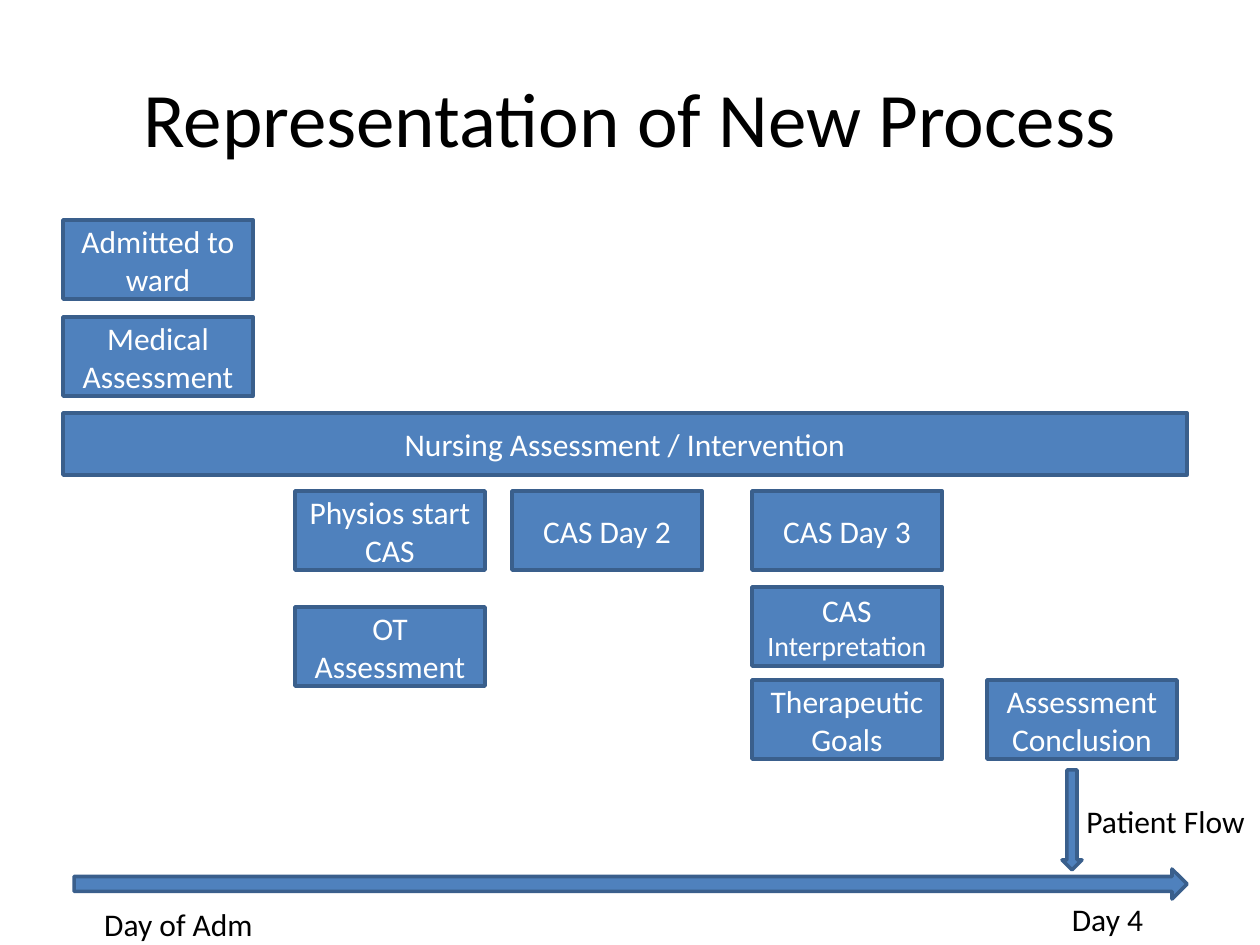
from dataclasses import dataclass

from pptx import Presentation
from pptx.dml.color import RGBColor
from pptx.enum.shapes import MSO_SHAPE
from pptx.enum.text import MSO_ANCHOR, PP_ALIGN
from pptx.util import Emu, Pt

PX_PER_INCH = 126
FONT = "Calibri"
BLUE, DARK_BLUE, WHITE, BLACK = "4F81BD", "3A5F8C", "FFFFFF", "000000"

STEP_WIDTH, STEP_HEIGHT = 190, 79
LABEL_WIDTH, LABEL_HEIGHT = 357, 43
# Left edges of the columns, one for each stage of the stay
ADMISSION, DAY_1, DAY_2, DAY_3, DAY_4 = 63, 295, 512, 752, 987
# Top edges of the rows
ROW_ADMITTED, ROW_MEDICAL, ROW_CAS = 220, 317, 491
ROW_INTERPRETATION, ROW_OT, ROW_GOALS = 587, 607, 680


@dataclass(frozen=True)
class Block:
    left: int
    top: int
    text: str = ""
    width: int = STEP_WIDTH
    height: int = STEP_HEIGHT
    kind: MSO_SHAPE = MSO_SHAPE.FLOWCHART_PROCESS
    small_text: str = ""


@dataclass(frozen=True)
class Label:
    left: int
    top: int
    text: str


STEPS = [
    Block(ADMISSION, ROW_ADMITTED, "Admitted to ward"),
    Block(ADMISSION, ROW_MEDICAL, "Medical Assessment"),
    Block(DAY_1, ROW_OT, "OT Assessment"),
    Block(DAY_1, ROW_CAS, "Physios start CAS"),
    Block(DAY_2, ROW_CAS, "CAS Day 2"),
    Block(DAY_3, ROW_GOALS, "Therapeutic Goals"),
    Block(DAY_3, ROW_CAS, "CAS Day 3"),
    Block(DAY_3, ROW_INTERPRETATION, "CAS ", small_text="Interpretation"),
    Block(DAY_4, ROW_GOALS, "Assessment Conclusion"),
    Block(ADMISSION, 413, "Nursing Assessment / Intervention", 1124, 62),
]
ARROWS = [
    Block(74, 869, width=1113, height=30, kind=MSO_SHAPE.RIGHT_ARROW),
    Block(1062, 770, width=20, height=100, kind=MSO_SHAPE.DOWN_ARROW),
]
LABELS = [
    Label(0, 902, "Day of Adm"),
    Label(929, 897, "Day 4"),
    Label(DAY_4, 799, "Patient Flow"),
]


def px(length: int) -> Emu:
    return Emu(round(length * 914400 / PX_PER_INCH))


def color(hex_code: str) -> RGBColor:
    return RGBColor.from_string(hex_code)


def add_text(shape, text: str, *, size: int = 18, font_color: str = WHITE) -> None:
    """Append a run to the centred first paragraph of the shape."""
    frame = shape.text_frame
    frame.word_wrap = True
    frame.vertical_anchor = MSO_ANCHOR.MIDDLE
    paragraph = frame.paragraphs[0]
    paragraph.alignment = PP_ALIGN.CENTER
    run = paragraph.add_run()
    run.text = text
    run.font.name = FONT
    run.font.size = Pt(size)
    run.font.color.rgb = color(font_color)


def draw_block(slide, block: Block) -> None:
    shape = slide.shapes.add_shape(
        block.kind, px(block.left), px(block.top), px(block.width), px(block.height)
    )
    shape.shadow.inherit = False
    shape.fill.solid()
    shape.fill.fore_color.rgb = color(BLUE)
    shape.line.color.rgb = color(DARK_BLUE)
    shape.line.width = Pt(2)
    if block.text:
        add_text(shape, block.text)
    if block.small_text:
        add_text(shape, block.small_text, size=16)


def draw_label(slide, label: Label) -> None:
    shape = slide.shapes.add_shape(
        MSO_SHAPE.FLOWCHART_PROCESS,
        px(label.left), px(label.top), px(LABEL_WIDTH), px(LABEL_HEIGHT),
    )
    shape.shadow.inherit = False
    shape.fill.background()
    shape.line.fill.background()
    add_text(shape, label.text, font_color=BLACK)


def draw_title(slide, text: str) -> None:
    title = slide.shapes.title
    title.left, title.top = px(63), px(38)
    title.width, title.height = px(1134), px(158)
    add_text(title, text, size=44, font_color=BLACK)


def main() -> None:
    presentation = Presentation()
    presentation.slide_width, presentation.slide_height = px(1260), px(945)
    slide = presentation.slides.add_slide(presentation.slide_layouts[5])
    slide.background.fill.solid()
    slide.background.fill.fore_color.rgb = color(WHITE)

    draw_title(slide, "Representation of New Process")
    for block in STEPS + ARROWS:
        draw_block(slide, block)
    for label in LABELS:
        draw_label(slide, label)
    presentation.save("out.pptx")


if __name__ == "__main__":
    main()
